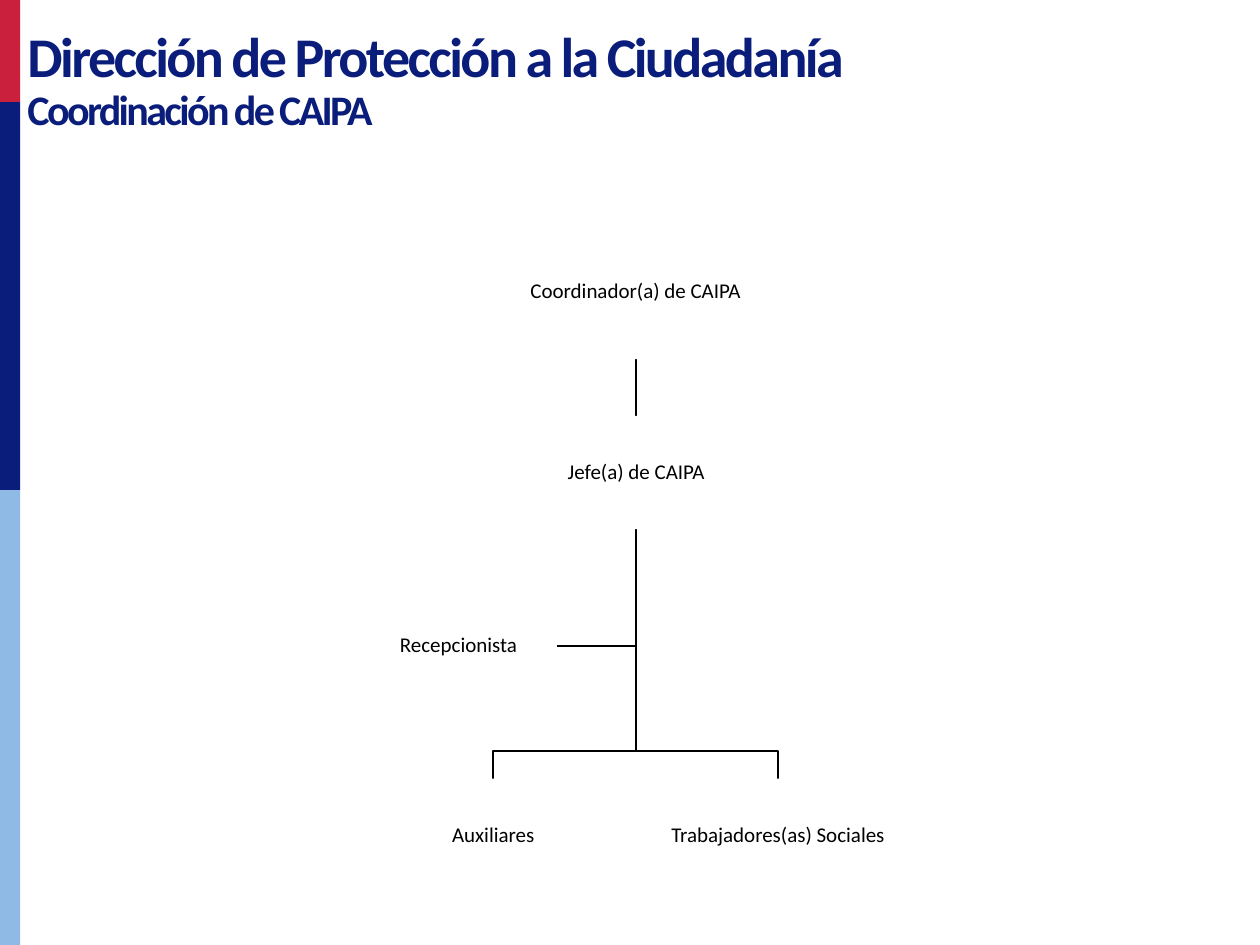
from lxml import etree
from pptx import Presentation
from pptx.dml.color import RGBColor
from pptx.enum import shapes, text
from pptx.oxml.ns import qn
from pptx.util import Inches, Pt

RED = RGBColor(0xCA, 0x1F, 0x3D)
NAVY = RGBColor(0x0A, 0x1D, 0x7A)
SKY = RGBColor(0x8F, 0xBA, 0xE5)
WHITE = RGBColor(0xFF, 0xFF, 0xFF)
BLACK = RGBColor(0, 0, 0)

BARS = [(0.81, RED), (3.08, NAVY), (3.61, SKY)]
TITLE = [("Dirección de Protección a la Ciudadanía", 32), ("Coordinación de CAIPA", 24)]
NODES = {
    "coordinador": ("Coordinador(a) de CAIPA", 1.11, 0, 2.15, 1.07),
    "jefe": ("Jefe(a) de CAIPA", 1.23, 1.52, 1.92, 0.9),
    "auxiliares": ("Auxiliares", 0.15, 4.4, 1.81, 0.91),
    "trabajadores": ("Trabajadores(as) Sociales", 2.41, 4.4, 1.81, 0.91),
    "recepcionista": ("Recepcionista", 0, 2.93, 1.56, 0.83),
}
BUS_GAP = 0.22


def set_all(obj, values):
    """Set each named attribute of an object."""
    for name, value in values.items():
        setattr(obj, name, value)


def add_block(s, left, top, width, height, color):
    """Add a plain filled rectangle."""
    sp = s.shapes.add_shape(shapes.MSO_SHAPE.RECTANGLE, Inches(left), Inches(top),
                            Inches(width), Inches(height))
    sp.shadow.inherit = False
    sp.fill.solid()
    sp.fill.fore_color.rgb = color
    sp.line.fill.background()
    return sp


def format_text(p, size, color, bold=False):
    """Give a paragraph its line spacing and font."""
    p.line_spacing = 0.9
    set_all(p.font, {"name": "Calibri", "size": Pt(size), "bold": bold})
    p.font.color.rgb = color


def style_line(sp):
    """Give a line its colour and width."""
    sp.line.color.rgb = BLACK
    sp.line.width = Pt(1)


def add_side_bar(s, left, top, width):
    """Stack the coloured bars down the slide edge."""
    for height, color in BARS:
        add_block(s, left, top, width, height, color)
        top += height


def add_title(s, left, top, width, height):
    """Add the two-line heading."""
    sp = s.shapes.add_textbox(Inches(left), Inches(top), Inches(width), Inches(height))
    tf = sp.text_frame
    set_all(tf, {"word_wrap": True, "auto_size": text.MSO_AUTO_SIZE.SHAPE_TO_FIT_TEXT})
    for i, (line, size) in enumerate(TITLE):
        p = tf.add_paragraph() if i else tf.paragraphs[0]
        r = p.add_run()
        r.text = line
        format_text(p, size, NAVY, True)
        r._r.get_or_add_rPr().set("spc", "-150")


def add_node(s, label, left, top, width, height):
    """Add one position of the organisation chart."""
    sp = add_block(s, left, top, width, height, WHITE)
    tf = sp.text_frame
    margins = dict.fromkeys(("margin_left", "margin_top", "margin_right", "margin_bottom"),
                            Inches(0.01))
    set_all(tf, {"word_wrap": True, "vertical_anchor": text.MSO_ANCHOR.MIDDLE, **margins})
    p = tf.paragraphs[0]
    p.text = label
    p.alignment = text.PP_ALIGN.CENTER
    format_text(p, 12, BLACK)


def add_elbow(s, points):
    """Draw an open line with square corners through the points."""
    start, *rest = [(Inches(x), Inches(y)) for x, y in points]
    builder = s.shapes.build_freeform(*start)
    builder.add_line_segments(rest, close=False)
    sp = builder.convert_to_shape()
    sp.shadow.inherit = False
    sp.fill.background()
    style_line(sp)


def add_org_chart(s, left, top):
    """Place the positions and the lines that join them."""
    boxes = {key: (left + x, top + y, w, h) for key, (_, x, y, w, h) in NODES.items()}
    x, y, w, h = boxes["jefe"]
    mid, bottom = x + w / 2, y + h

    rx, ry, rw, rh = boxes["recepcionista"]
    side = ry + rh / 2
    add_elbow(s, [(mid, bottom), (mid, side), (rx + rw, side)])
    for key in ("trabajadores", "auxiliares"):
        cx, cy, cw, _ = boxes[key]
        center, bus = cx + cw / 2, cy - BUS_GAP
        add_elbow(s, [(mid, bottom), (mid, bus), (center, bus), (center, cy)])

    _, head_y, _, head_h = boxes["coordinador"]
    line = s.shapes.add_connector(shapes.MSO_CONNECTOR.STRAIGHT, Inches(mid),
                                  Inches(head_y + head_h), Inches(mid), Inches(y))
    style_line(line)
    etree.SubElement(line._element.spPr, qn("a:effectLst"))

    for key, box in boxes.items():
        add_node(s, NODES[key][0], *box)


def main():
    """Build and save the slide."""
    prs = Presentation()
    set_all(prs, {"slide_width": Inches(10), "slide_height": Inches(7.5)})
    s = prs.slides.add_slide(prs.slide_layouts[6])
    add_side_bar(s, 0, 0, 0.16)
    add_org_chart(s, 2.86, 1.78)
    add_title(s, 0.12, 0.18, 7.46, 0.95)
    prs.save("out.pptx")


if __name__ == "__main__":
    main()
